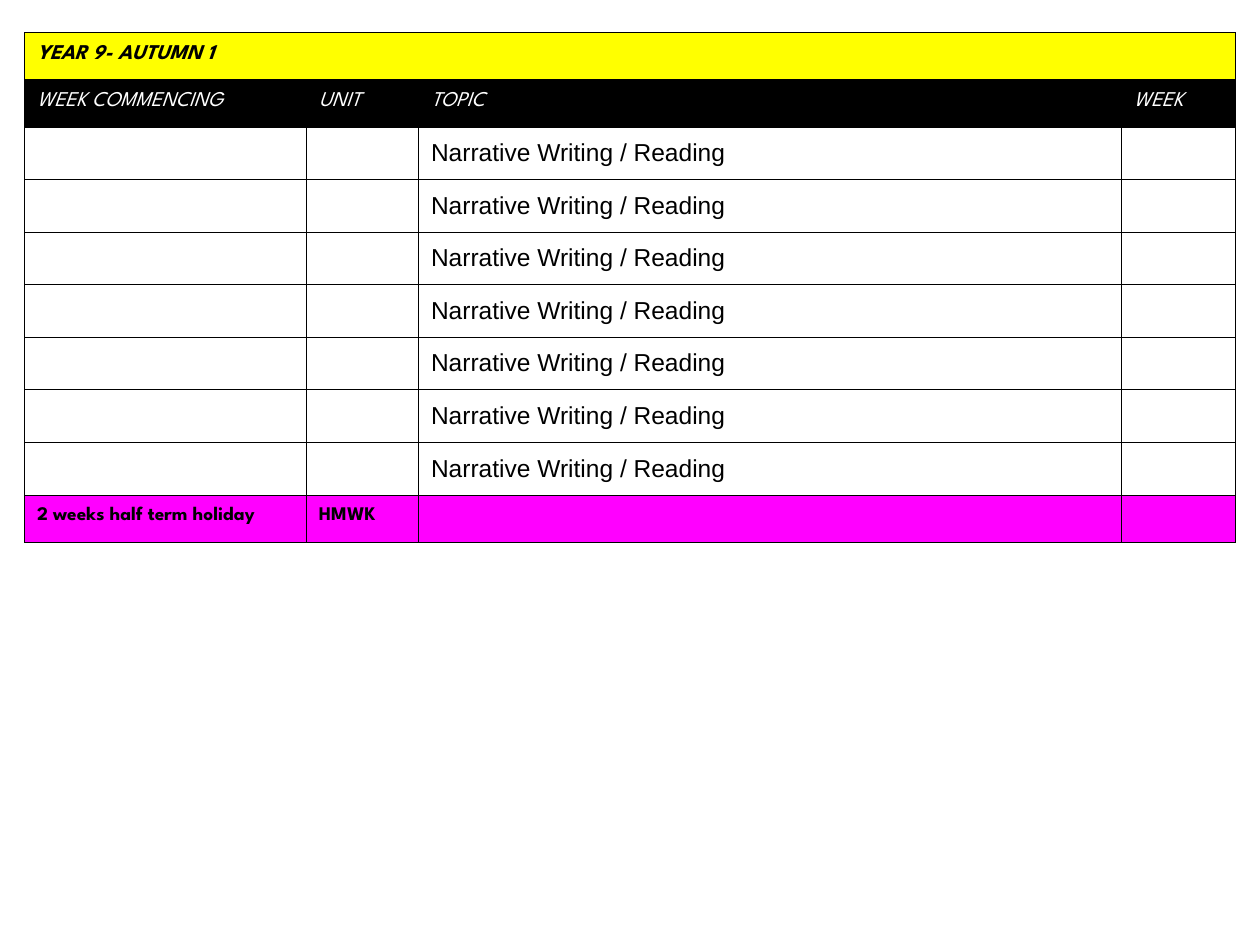
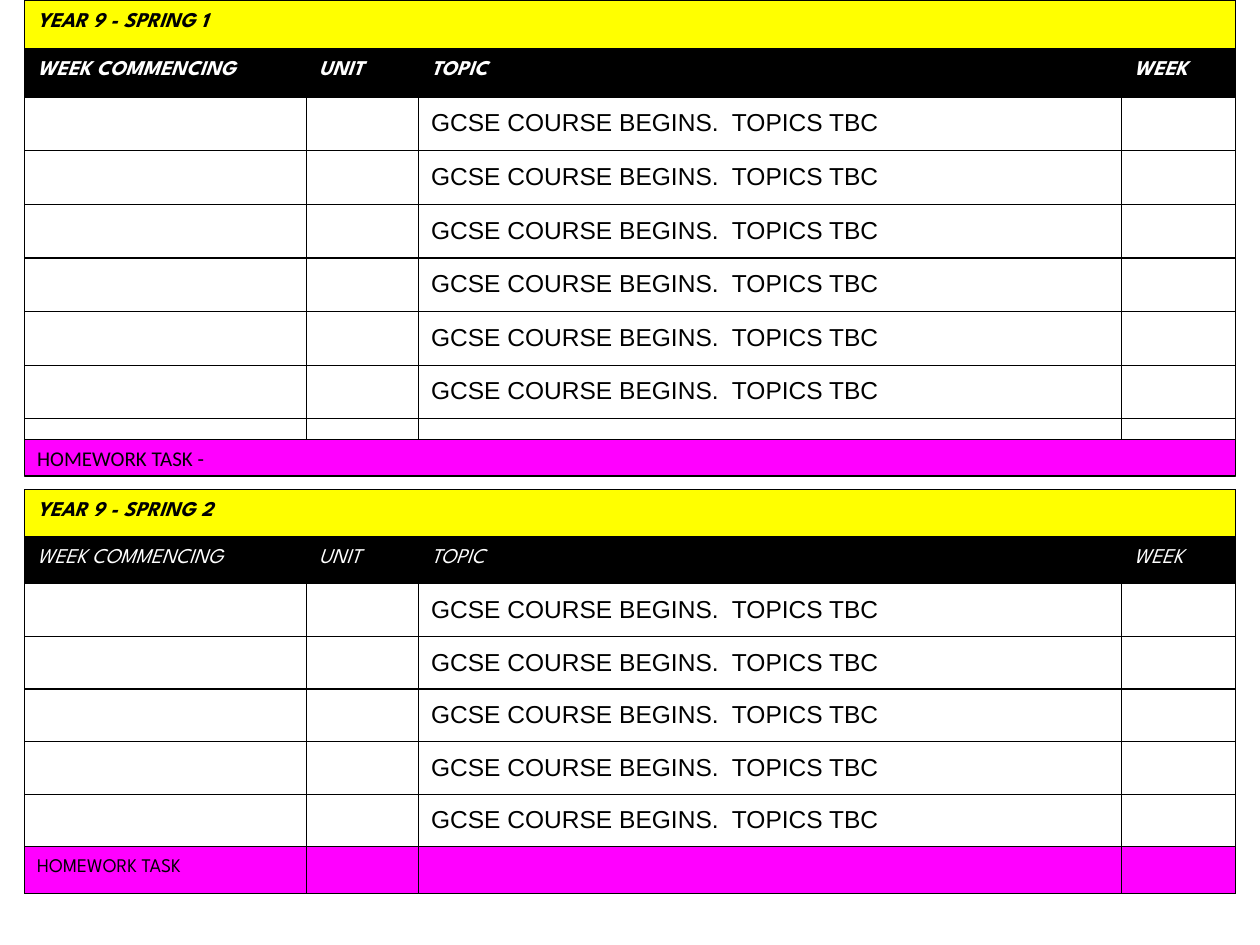
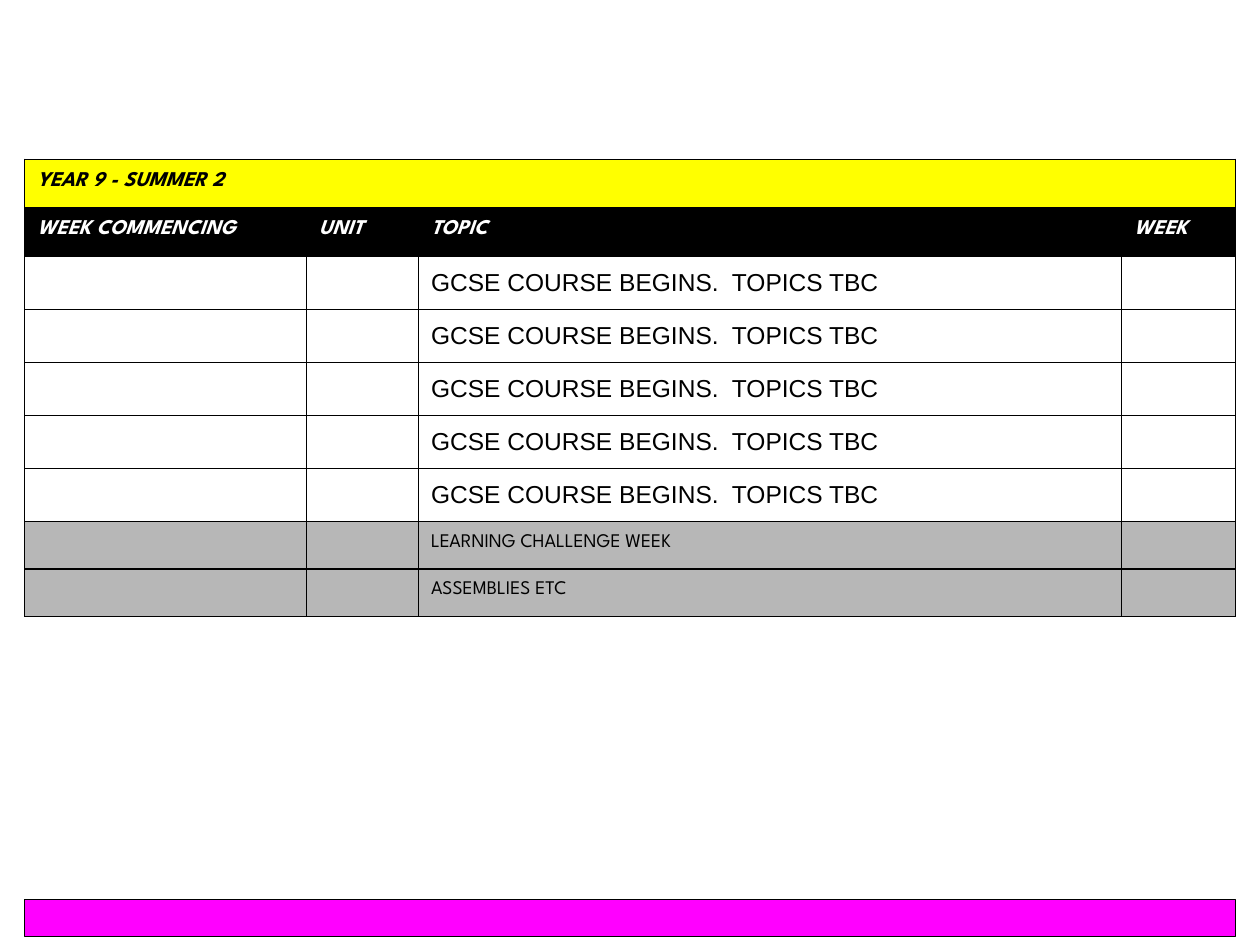
"""Build the Year 9 termly topic planner."""
from lxml import etree
from pptx import Presentation
from pptx.dml.color import RGBColor
from pptx.enum.shapes import MSO_SHAPE
from pptx.enum.text import MSO_ANCHOR, PP_ALIGN
from pptx.oxml.ns import qn
from pptx.util import Cm, Pt

RECTANGLE = MSO_SHAPE.RECTANGLE
MIDDLE = MSO_ANCHOR.MIDDLE
LEFT_ALIGNED = PP_ALIGN.LEFT

COLOURS = {
    "black": "000000",
    "white": "FFFFFF",
    "yellow": "FFFF00",
    "magenta": "FF00FF",
    "grey": "B7B7B7",
}

HEADINGS = ("WEEK COMMENCING", "UNIT", "TOPIC", "WEEK")
NARRATIVE = ("", "", "Narrative Writing / Reading", "")
GCSE = ("", "", "GCSE COURSE BEGINS.  TOPICS TBC", "")
EMPTY = ("", "", "", "")

SPARTAN = "League Spartan"
ROW_STYLES = {
    "title": {"fill": "yellow", "size": 12, "font": SPARTAN, "bold": True, "italic": True},
    "heading": {"fill": "black", "colour": "white", "size": 12, "font": SPARTAN, "italic": True},
    "bold heading": {"fill": "black", "colour": "white", "size": 12, "font": SPARTAN,
                     "bold": True, "italic": True},
    "topic": {"fill": "white", "size": 14, "font": "Arial"},
    "holiday": {"fill": "magenta", "size": 11, "font": SPARTAN, "bold": True},
    "homework": {"fill": "magenta", "size": 11, "font": SPARTAN},
    "event": {"fill": "grey", "size": 11, "font": SPARTAN},
}
BAR_STYLE = {"size": 12, "font": "Calibri"}

SLIDES = [
    {
        "terms": [{
            "title": "YEAR 9- AUTUMN 1", "top": 0.66, "heading": "heading",
            "header_height": 0.95, "topic_height": 1.06, "topics": [NARRATIVE] * 7,
            "closing": [("holiday", ("2 weeks half term holiday", "HMWK", "", ""))],
        }],
        "bars": [],
    },
    {
        "terms": [
            {
                "title": "YEAR 9 - SPRING 1", "top": 0, "heading": "bold heading",
                "header_height": 0.98, "topic_height": 1.08, "topics": [GCSE] * 6,
                "closing": [("topic", EMPTY)],
            },
            {
                "title": "YEAR 9 - SPRING 2", "top": 9.87, "heading": "heading",
                "header_height": 0.95, "topic_height": 1.06, "topics": [GCSE] * 5,
                "closing": [("homework", ("HOMEWORK TASK", "", "", ""))],
            },
        ],
        "bars": [(8.86, "HOMEWORK TASK -")],
    },
    {
        "terms": [{
            "title": "YEAR 9 - SUMMER 2", "top": 3.21, "heading": "bold heading",
            "header_height": 0.98, "topic_height": 1.07, "topics": [GCSE] * 5,
            "closing": [("event", ("", "", "LEARNING CHALLENGE WEEK", "")),
                        ("event", ("", "", "ASSEMBLIES ETC", ""))],
        }],
        "bars": [(18.14, "")],
    },
]

LEFT = 0.5
COLUMN_WIDTHS = (5.68, 2.26, 14.17, 2.3)
TABLE_WIDTH = sum(COLUMN_WIDTHS)
CLOSING_HEIGHT = 0.95
BAR_HEIGHT = 0.74
MARGIN = 0.25
LINE_WIDTH = Pt(0.75)


def colour(name):
    """Return the named colour."""
    return RGBColor.from_string(COLOURS[name])


def paint(fill, name):
    """Make a fill solid in the named colour."""
    fill.solid()
    fill.fore_color.rgb = colour(name)


def set_margins(box, size):
    """Give a cell or text frame equal margins."""
    box.margin_left = box.margin_right = box.margin_top = box.margin_bottom = Cm(size)


def write(paragraph, text, style):
    """Add one styled run to a paragraph."""
    run = paragraph.add_run()
    run.text = text
    run.font.name = style["font"]
    run.font.size = Pt(style["size"])
    run.font.bold = style.get("bold", False)
    run.font.italic = style.get("italic", False)
    run.font.color.rgb = colour(style.get("colour", "black"))


def add_borders(cell):
    """Draw a thin black line on each side of a cell."""
    properties = cell._tc.get_or_add_tcPr()
    for side in ("lnL", "lnR", "lnT", "lnB"):
        line = etree.SubElement(properties, qn(f"a:{side}"), w=str(LINE_WIDTH))
        fill = etree.SubElement(line, qn("a:solidFill"))
        etree.SubElement(fill, qn("a:srgbClr"), val=COLOURS["black"])


def fill_cell(cell, text, style):
    """Format a cell and write its text."""
    add_borders(cell)
    paint(cell.fill, style["fill"])
    set_margins(cell, MARGIN if text else 0)
    if text:
        write(cell.text_frame.paragraphs[0], text, style)


def add_term(slide, term):
    """Add the table of one term."""
    header, topic = term["header_height"], term["topic_height"]
    rows = [("title", (term["title"], "", "", ""), header), (term["heading"], HEADINGS, header)]
    rows += [("topic", texts, topic) for texts in term["topics"]]
    rows += [(kind, texts, CLOSING_HEIGHT) for kind, texts in term["closing"]]
    height = sum(row[2] for row in rows)
    table = slide.shapes.add_table(len(rows), len(COLUMN_WIDTHS), Cm(LEFT), Cm(term["top"]),
                                   Cm(TABLE_WIDTH), Cm(height)).table
    table.first_row = table.horz_banding = False
    for column, width in zip(table.columns, COLUMN_WIDTHS):
        column.width = Cm(width)
    for row, (kind, texts, row_height) in zip(table.rows, rows):
        row.height = Cm(row_height)
        for cell, text in zip(row.cells, texts):
            fill_cell(cell, text, ROW_STYLES[kind])
    table.cell(0, 0).merge(table.cell(0, len(COLUMN_WIDTHS) - 1))


def add_bar(slide, top, text):
    """Add a magenta bar as wide as the tables."""
    bar = slide.shapes.add_shape(RECTANGLE, Cm(LEFT), Cm(top), Cm(TABLE_WIDTH), Cm(BAR_HEIGHT))
    bar.shadow.inherit = False
    paint(bar.fill, "magenta")
    bar.line.color.rgb = colour("black")
    bar.line.width = LINE_WIDTH
    if text:
        frame = bar.text_frame
        set_margins(frame, MARGIN)
        frame.vertical_anchor = MIDDLE
        paragraph = frame.paragraphs[0]
        paragraph.alignment = LEFT_ALIGNED
        write(paragraph, text, BAR_STYLE)


def main():
    """Build every slide and save the presentation."""
    presentation = Presentation()
    presentation.slide_width, presentation.slide_height = Cm(25.4), Cm(19.05)
    blank = presentation.slide_layouts.get_by_name("Blank")
    for content in SLIDES:
        slide = presentation.slides.add_slide(blank)
        for term in content["terms"]:
            add_term(slide, term)
        for top, text in content["bars"]:
            add_bar(slide, top, text)
    presentation.save("out.pptx")


if __name__ == "__main__":
    main()
